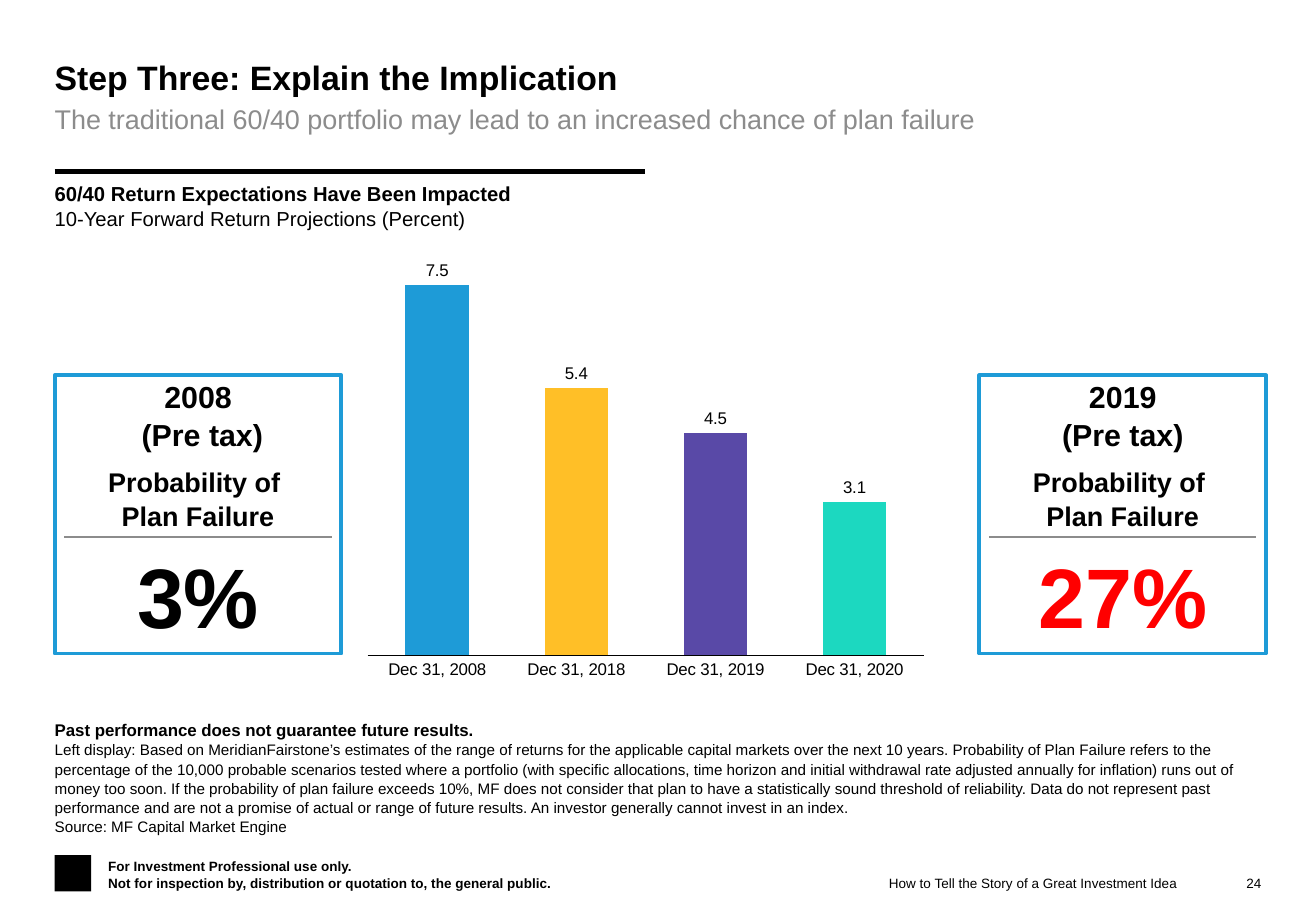
from dataclasses import dataclass

from lxml import etree
from pptx import Presentation
from pptx.chart.data import CategoryChartData
from pptx.dml.color import RGBColor
from pptx.enum.chart import XL_CHART_TYPE, XL_LABEL_POSITION, XL_TICK_LABEL_POSITION, XL_TICK_MARK
from pptx.enum.shapes import MSO_CONNECTOR, MSO_SHAPE
from pptx.enum.text import MSO_ANCHOR, PP_ALIGN
from pptx.oxml import parse_xml
from pptx.oxml.ns import nsdecls, qn
from pptx.util import Pt

COLUMN = XL_CHART_TYPE.COLUMN_CLUSTERED
OUTSIDE_END = XL_LABEL_POSITION.OUTSIDE_END
NO_LABELS, NO_TICKS = XL_TICK_LABEL_POSITION.NONE, XL_TICK_MARK.NONE
STRAIGHT, RECTANGLE = MSO_CONNECTOR.STRAIGHT, MSO_SHAPE.RECTANGLE
TOP, MIDDLE, BOTTOM = MSO_ANCHOR.TOP, MSO_ANCHOR.MIDDLE, MSO_ANCHOR.BOTTOM
LEFT, CENTER, RIGHT = PP_ALIGN.LEFT, PP_ALIGN.CENTER, PP_ALIGN.RIGHT

PX = 9144
FONT = "Arial"
BLACK, GRAY, RED, BLUE = "000000", "8C8C8C", "FF0000", "1E9BD7"
PANEL_TOP, PANEL_W, PANEL_H = 309, 236, 229
DISCLOSURE = (
    "Left display: Based on MeridianFairstone’s estimates of the range of returns for the applicable "
    "capital markets over the next 10 years. Probability of Plan Failure refers to the percentage of "
    "the 10,000 probable scenarios tested where a portfolio (with specific allocations, time horizon "
    "and initial withdrawal rate adjusted annually for inflation) runs out of money too soon. If the "
    "probability of plan failure exceeds 10%, MF does not consider that plan to have a statistically "
    "sound threshold of reliability. Data do not represent past performance and are not a promise of "
    "actual or range of future results. An investor generally cannot invest in an index."
)


@dataclass
class Para:
    text: str
    size: int
    bold: bool = False
    color: str = BLACK


@dataclass
class TextBox:
    x: int
    y: int
    w: int
    h: int
    paras: list[Para]
    align: PP_ALIGN = LEFT
    anchor: MSO_ANCHOR = TOP
    pad_x: int = 0
    pad_y: int = 0
    wrap: bool = True


@dataclass
class Panel:
    x: int
    heading: list[str]
    chance: str
    color: str


@dataclass
class Bar:
    date: str
    value: float
    color: str


TEXTS = [
    TextBox(45, 45, 993, 34, [Para("Step Three: Explain the Implication", 20, True)]),
    TextBox(45, 83, 993, 77, [
        Para("The traditional 60/40 portfolio may lead to an increased chance of plan failure", 16, color=GRAY)]),
    TextBox(45, 143, 486, 54, [
        Para("60/40 Return Expectations Have Been Impacted", 12, True),
        Para("10-Year Forward Return Projections (Percent)", 12)], pad_y=5),
    TextBox(45, 595, 998, 93, [
        Para("Past performance does not guarantee future results.", 10, True),
        Para(DISCLOSURE, 9),
        Para("Source: MF Capital Market Engine", 9)], anchor=BOTTOM),
    TextBox(89, 707, 411, 27, [
        Para("For Investment Professional use only.", 8, True),
        Para("Not for inspection by, distribution or quotation to, the general public.", 8, True)], anchor=BOTTOM),
    TextBox(691, 719, 278, 15, [Para("How to Tell the Story of a Great Investment Idea", 8)], RIGHT, MIDDLE),
    TextBox(1006, 719, 32, 15, [Para("24", 8)], RIGHT, MIDDLE),
]
PANELS = [
    Panel(45, ["2008\n (Pre tax)"], "3%", BLACK),
    Panel(806, ["2019", "(Pre tax)"], "27%", RED),
]
BARS = [
    Bar("Dec 31, 2008", 7.5, BLUE),
    Bar("Dec 31, 2018", 5.4, "FFBF27"),
    Bar("Dec 31, 2019", 4.5, "5949A7"),
    Bar("Dec 31, 2020", 3.1, "1CD8C0"),
]


def rgb(color: str) -> RGBColor:
    return RGBColor.from_string(color)


def add_text(s, box: TextBox) -> None:
    tf = s.shapes.add_textbox(box.x * PX, box.y * PX, box.w * PX, box.h * PX).text_frame
    tf.word_wrap = box.wrap
    tf.vertical_anchor = box.anchor
    tf.margin_left = tf.margin_right = box.pad_x * PX
    tf.margin_top = tf.margin_bottom = box.pad_y * PX
    for i, para in enumerate(box.paras):
        p = tf.add_paragraph() if i else tf.paragraphs[0]
        p.text = para.text
        p.alignment = box.align
        p.line_spacing = 1.05
        p.font.name = FONT
        p.font.size = Pt(para.size)
        p.font.bold = para.bold
        p.font.color.rgb = rgb(para.color)


def add_rule(s, x: int, y: int, w: int, color: str, weight: float) -> None:
    cxn = s.shapes.add_connector(STRAIGHT, x * PX, y * PX, (x + w) * PX, y * PX)
    cxn.line.color.rgb = rgb(color)
    cxn.line.width = Pt(weight)
    etree.SubElement(cxn._element.spPr, qn("a:effectLst"))


def add_rect(s, x: int, y: int, w: int, h: int):
    sp = s.shapes.add_shape(RECTANGLE, x * PX, y * PX, w * PX, h * PX)
    sp.shadow.inherit = False
    return sp


def add_panel(s, panel: Panel) -> None:
    sp = add_rect(s, panel.x, PANEL_TOP, PANEL_W, PANEL_H)
    sp.fill.background()
    sp.line.color.rgb = rgb(BLUE)
    sp.line.width = Pt(2.25)
    add_rule(s, panel.x + 8, 442, PANEL_W - 16, GRAY, 1.5)
    rows = [
        (306, 118, 71, [Para(text, 18, True) for text in panel.heading]),
        (378, 160, 64, [Para("Probability of \nPlan Failure", 16, True)]),
        (441, 150, 94, [Para(panel.chance, 50, True, panel.color)]),
    ]
    for y, w, h, paras in rows:
        x = panel.x + (PANEL_W - w) // 2
        add_text(s, TextBox(x, y, w, h, paras, CENTER, MIDDLE, 5, 5, False))


def add_returns_chart(s) -> None:
    data = CategoryChartData()
    data.categories = [bar.date for bar in BARS]
    data.add_series("Series 1", [bar.value for bar in BARS])
    chart = s.shapes.add_chart(COLUMN, 302 * PX, 214 * PX, 459 * PX, 350 * PX, data).chart
    chart.has_legend = chart.has_title = False
    chart.font.name = FONT
    chart.font.size = Pt(10)
    chart.font.color.rgb = rgb(BLACK)

    dates, returns = chart.category_axis, chart.value_axis
    for axis in (dates, returns):
        axis.has_major_gridlines = False
        axis.major_tick_mark = axis.minor_tick_mark = NO_TICKS
    dates.format.line.color.rgb = rgb(BLACK)
    dates.format.line.width = Pt(0.75)
    returns.minimum_scale, returns.maximum_scale = 0, 8
    returns.tick_label_position = NO_LABELS
    returns.format.line.fill.background()

    plot = chart.plots[0]
    plot.gap_width = 119
    plot.vary_by_categories = False
    plot.has_data_labels = True
    plot.data_labels.show_value = True
    plot.data_labels.position = OUTSIDE_END
    for i, bar in enumerate(BARS):
        fill = plot.series[0].points[i].format.fill
        fill.solid()
        fill.fore_color.rgb = rgb(bar.color)

    area = chart._chartSpace.chart.plotArea
    for layout in area.findall(qn("c:layout")):
        area.remove(layout)
    area.insert(0, parse_xml(
        f'<c:layout {nsdecls("c")}><c:manualLayout><c:layoutTarget val="inner"/>'
        '<c:xMode val="edge"/><c:yMode val="edge"/><c:x val="0"/><c:y val="0"/>'
        '<c:w val="1"/><c:h val="0.93"/></c:manualLayout></c:layout>'))


def main() -> None:
    """Build the plan failure slide and save it."""
    prs = Presentation()
    prs.slide_width, prs.slide_height = 1083 * PX, 750 * PX
    s = prs.slides.add_slide(prs.slide_layouts[6])
    badge = add_rect(s, 45, 704, 30, 30)
    badge.fill.solid()
    badge.fill.fore_color.rgb = rgb(BLACK)
    badge.line.fill.background()
    add_rule(s, 45, 141, 486, BLACK, 3)
    for box in TEXTS:
        add_text(s, box)
    add_returns_chart(s)
    for panel in PANELS:
        add_panel(s, panel)
    prs.save("out.pptx")


if __name__ == "__main__":
    main()
